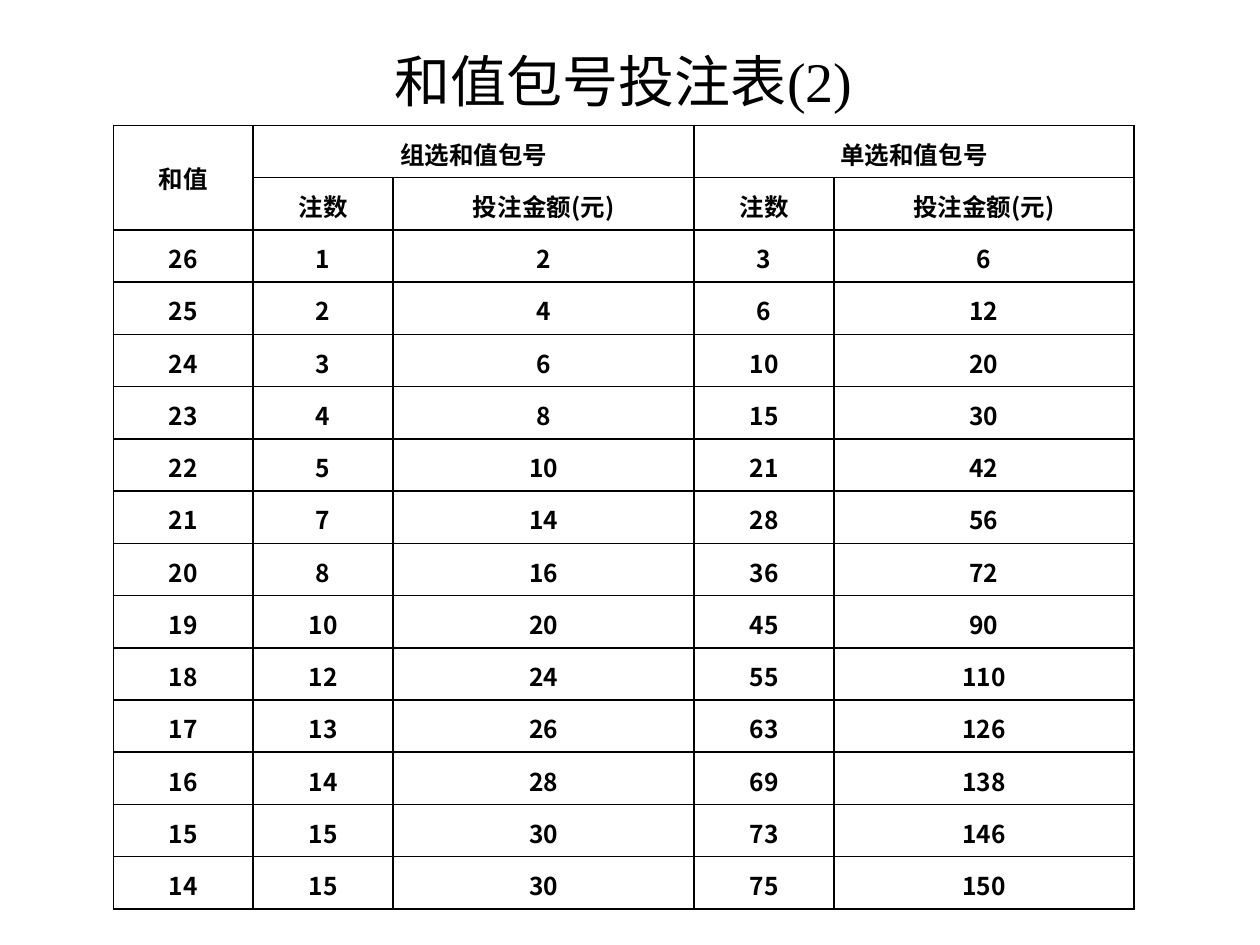
from lxml import etree
from pptx import Presentation
from pptx.dml.color import RGBColor
from pptx.enum.text import MSO_ANCHOR, PP_ALIGN
from pptx.oxml.ns import qn
from pptx.util import Inches, Pt

CENTER = PP_ALIGN.CENTER
MIDDLE, BOTTOM = MSO_ANCHOR.MIDDLE, MSO_ANCHOR.BOTTOM
COLORS = {"ink": "000000"}
BODY_FONT, TITLE_FONT = "Noto Sans CJK SC", "Times New Roman"


def write(cell, text, size=14, font=BODY_FONT, bold=True, anchor=BOTTOM):
    cell.vertical_anchor = anchor
    paragraph = cell.text_frame.paragraphs[0]
    paragraph.alignment = CENTER
    run = paragraph.add_run()
    run.text = text
    run.font.size = Pt(size)
    run.font.name = font
    run.font.bold = bold
    run.font.color.rgb = RGBColor.from_string(COLORS["ink"])
    if font == BODY_FONT:
        etree.SubElement(run.font._element, qn("a:ea")).set("typeface", font)


def set_borders(cell, visible):
    properties = cell._tc.get_or_add_tcPr()
    for side in ("L", "R", "T", "B"):
        line = etree.SubElement(properties, qn(f"a:ln{side}"), w=str(Pt(1)))
        if side in visible:
            fill = etree.SubElement(line, qn("a:solidFill"))
            etree.SubElement(fill, qn("a:srgbClr"), val=COLORS["ink"])
        else:
            etree.SubElement(line, qn("a:noFill"))


bets = [
    (26, 1, 2, 3, 6),
    (25, 2, 4, 6, 12),
    (24, 3, 6, 10, 20),
    (23, 4, 8, 15, 30),
    (22, 5, 10, 21, 42),
    (21, 7, 14, 28, 56),
    (20, 8, 16, 36, 72),
    (19, 10, 20, 45, 90),
    (18, 12, 24, 55, 110),
    (17, 13, 26, 63, 126),
    (16, 14, 28, 69, 138),
    (15, 15, 30, 73, 146),
    (14, 15, 30, 75, 150),
]
column_widths = [1.11, 1.11, 2.39, 1.11, 2.38]
title_height, total_height = Inches(0.63), Inches(6.85)
row_count = len(bets) + 3

prs = Presentation()
prs.slide_width, prs.slide_height = Inches(10), Inches(7.5)
slide = prs.slides.add_slide(prs.slide_layouts[6])

bet_table = slide.shapes.add_table(
    row_count, len(column_widths), Inches(0.9), Inches(0.25), Inches(8.11), total_height
).table
bet_table.first_row = False
bet_table.horz_banding = False

for column, width in zip(bet_table.columns, column_widths):
    column.width = Inches(width)
for index, row in enumerate(bet_table.rows):
    row.height = (total_height - title_height) // (row_count - 1) if index else title_height
    for cell in row.cells:
        set_borders(cell, "LRTB" if index else "B")
        cell.fill.background()

for top, left, bottom, right in [(0, 0, 0, 4), (1, 0, 2, 0), (1, 1, 1, 2), (1, 3, 1, 4)]:
    bet_table.cell(top, left).merge(bet_table.cell(bottom, right))

write(bet_table.cell(0, 0), "和值包号投注表(2)", size=32, font=TITLE_FONT, bold=False, anchor=MIDDLE)
write(bet_table.cell(1, 0), "和值", anchor=MIDDLE)
for left, group in [(1, "组选和值包号"), (3, "单选和值包号")]:
    write(bet_table.cell(1, left), group)
    write(bet_table.cell(2, left), "注数")
    write(bet_table.cell(2, left + 1), "投注金额(元)")

for row_index, bet in enumerate(bets, start=3):
    for column_index, value in enumerate(bet):
        write(bet_table.cell(row_index, column_index), str(value))

prs.save("out.pptx")
